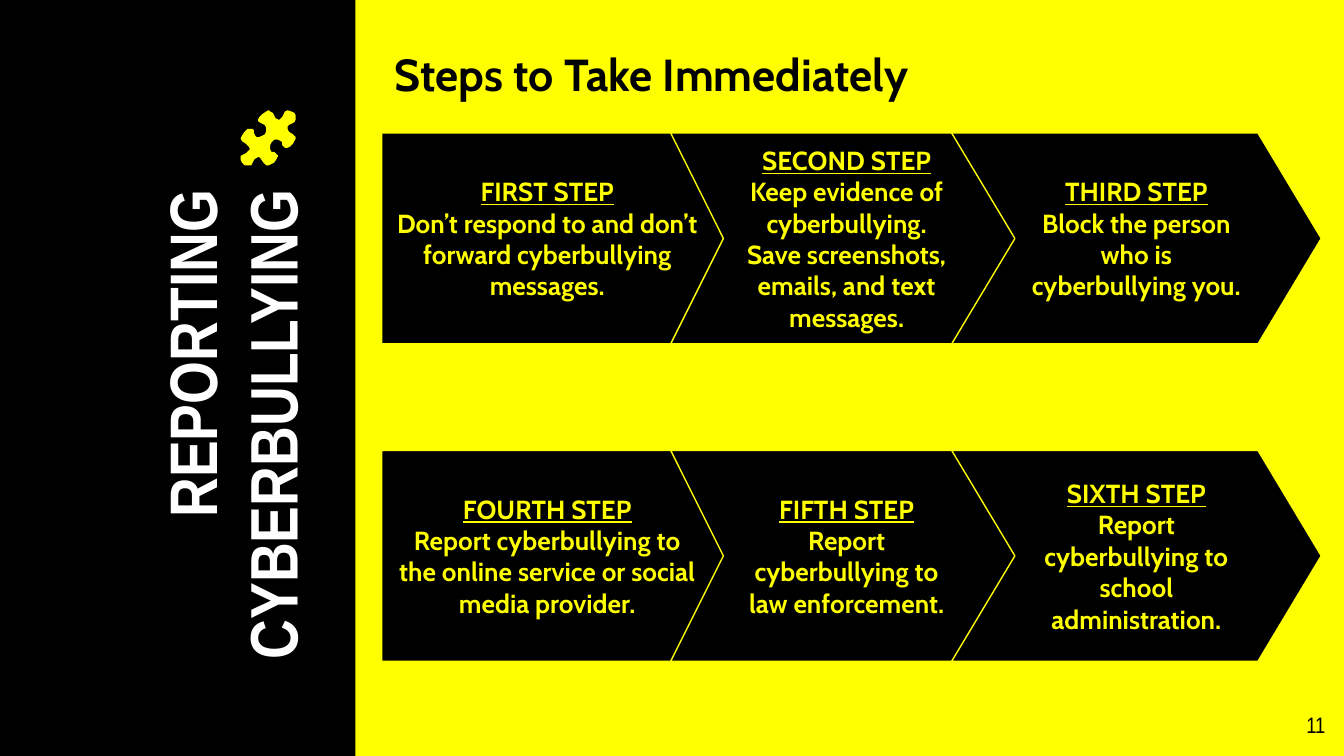
from pptx import Presentation
from pptx.dml.color import RGBColor
from pptx.enum.shapes import MSO_SHAPE
from pptx.enum.text import MSO_ANCHOR, PP_ALIGN
from pptx.util import Pt

BLACK = RGBColor(0, 0, 0)
WHITE = RGBColor(255, 255, 255)
YELLOW = RGBColor(255, 255, 0)
RECT, PENTAGON, CHEVRON = MSO_SHAPE.RECTANGLE, MSO_SHAPE.PENTAGON, MSO_SHAPE.CHEVRON
LEFT, CENTER, RIGHT = PP_ALIGN.LEFT, PP_ALIGN.CENTER, PP_ALIGN.RIGHT
TOP, MIDDLE = MSO_ANCHOR.TOP, MSO_ANCHOR.MIDDLE
HEAD, BODY = "Arial Narrow", "Cabin"
INSET = 7.2

COLUMNS = [
    (PENTAGON, 204.5, 194.4, 0.3),
    (CHEVRON, 359.3, 188.6, 0.25),
    (CHEVRON, 509.8, 198, 0.3),
]
ROWS = [
    (71.3, [
        ("FIRST STEP", "Don’t respond to and don’t forward cyberbullying messages."),
        ("SECOND STEP", "Keep evidence of cyberbullying. Save screenshots, emails, and text messages."),
        ("THIRD STEP", "Block the person who is cyberbullying you."),
    ]),
    (241.3, [
        ("FOURTH STEP", "Report cyberbullying to the online service or social media provider."),
        ("FIFTH STEP", "Report cyberbullying to law enforcement."),
        ("SIXTH STEP", "Report cyberbullying to school administration."),
    ]),
]
ROW_HEIGHT = 113

PUZZLE_UNIT = 0.72
PUZZLE = [
    (200, 82), (198, 83), (195, 85), (193, 87), (192, 89), (192, 90), (193, 91),
    (195, 92), (197, 93), (198, 95), (198, 98), (197, 100), (195, 101), (193, 102),
    (191, 102), (190, 101), (189, 99), (189, 97), (188, 96), (186, 96), (184, 96),
    (182, 98), (180, 101), (179, 103), (180, 105), (183, 107), (185, 109), (186, 111),
    (185, 112), (183, 114), (181, 115), (179, 116), (179, 119), (180, 121), (182, 123),
    (185, 123), (187, 123), (188, 121), (189, 119), (190, 118), (192, 117), (193, 117),
    (194, 118), (196, 121), (198, 123), (200, 123), (202, 122), (204, 121), (206, 118),
    (207, 116), (206, 115), (204, 113), (202, 113), (201, 111), (201, 108), (202, 106),
    (204, 104), (207, 104), (209, 105), (210, 106), (210, 108), (211, 109), (212, 110),
    (214, 110), (216, 109), (218, 107), (220, 103), (220, 102), (218, 100), (215, 98),
    (214, 96), (214, 94), (215, 93), (217, 92), (219, 91), (220, 89), (220, 86),
    (219, 84), (217, 83), (214, 82), (212, 83), (211, 85), (210, 87), (208, 89),
    (207, 89), (205, 88), (203, 84), (201, 83),
]


class Deck:
    def __init__(self, prs):
        self.s = prs.slides.add_slide(prs.slide_layouts[6])
        self.s.background.fill.solid()
        self.s.background.fill.fore_color.rgb = YELLOW

    def paint(self, sp, fill, line=None):
        sp.shadow.inherit = False
        sp.fill.solid()
        sp.fill.fore_color.rgb = fill
        if line is None:
            sp.line.fill.background()
        else:
            sp.line.color.rgb = line
            sp.line.width = Pt(0.75)

    def shape(self, kind, x, y, w, h, fill, line=None):
        sp = self.s.shapes.add_shape(kind, Pt(x), Pt(y), Pt(w), Pt(h))
        self.paint(sp, fill, line)
        return sp

    def outline(self, points, unit, fill):
        builder = self.s.shapes.build_freeform(*points[0], scale=Pt(unit))
        builder.add_line_segments(points[1:], close=True)
        self.paint(builder.convert_to_shape(), fill)

    def fill_text(self, sp, lines, font, size, color, align, anchor=TOP, bold=True, underline_first=False):
        tf = sp.text_frame
        tf.word_wrap = True
        tf.vertical_anchor = anchor
        tf.margin_left = tf.margin_right = tf.margin_top = tf.margin_bottom = Pt(INSET)
        for i, line in enumerate(lines):
            p = tf.paragraphs[0] if i == 0 else tf.add_paragraph()
            p.alignment = align
            r = p.add_run()
            r.text = line
            r.font.name = font
            r.font.size = Pt(size)
            r.font.bold = bold
            r.font.underline = underline_first and i == 0
            r.font.color.rgb = color

    def text(self, x, y, w, h, lines, font, size, color, align, bold=True, rotation=0):
        sp = self.s.shapes.add_textbox(Pt(x), Pt(y), Pt(w), Pt(h))
        sp.rotation = rotation
        self.fill_text(sp, lines, font, size, color, align, bold=bold)

    def step(self, kind, x, y, w, h, adjust, lines):
        sp = self.shape(kind, x, y, w, h, BLACK, YELLOW)
        sp.adjustments[0] = adjust
        self.fill_text(sp, lines, BODY, 14, YELLOW, CENTER, MIDDLE, underline_first=True)


def main():
    prs = Presentation()
    prs.slide_width, prs.slide_height = Pt(720), Pt(405)
    deck = Deck(prs)
    deck.shape(RECT, 0, 0, 190.5, 405, BLACK)
    deck.text(-39.6, 207.4, 304.6, 79.2, ["REPORTING", "CYBERBULLYING"],
              HEAD, 36, WHITE, RIGHT, rotation=270)
    deck.outline(PUZZLE, PUZZLE_UNIT, YELLOW)
    deck.text(204.5, 18, 460.8, 31, ["Steps to Take Immediately"], BODY, 24, BLACK, LEFT)
    for y, steps in ROWS:
        for (kind, x, w, adjust), lines in zip(COLUMNS, steps):
            deck.step(kind, x, y, w, ROW_HEIGHT, adjust, lines)
    deck.text(673.9, 373.7, 43.2, 31, ["11"], HEAD, 12, BLACK, RIGHT, bold=False)
    prs.save("out.pptx")


if __name__ == "__main__":
    main()
